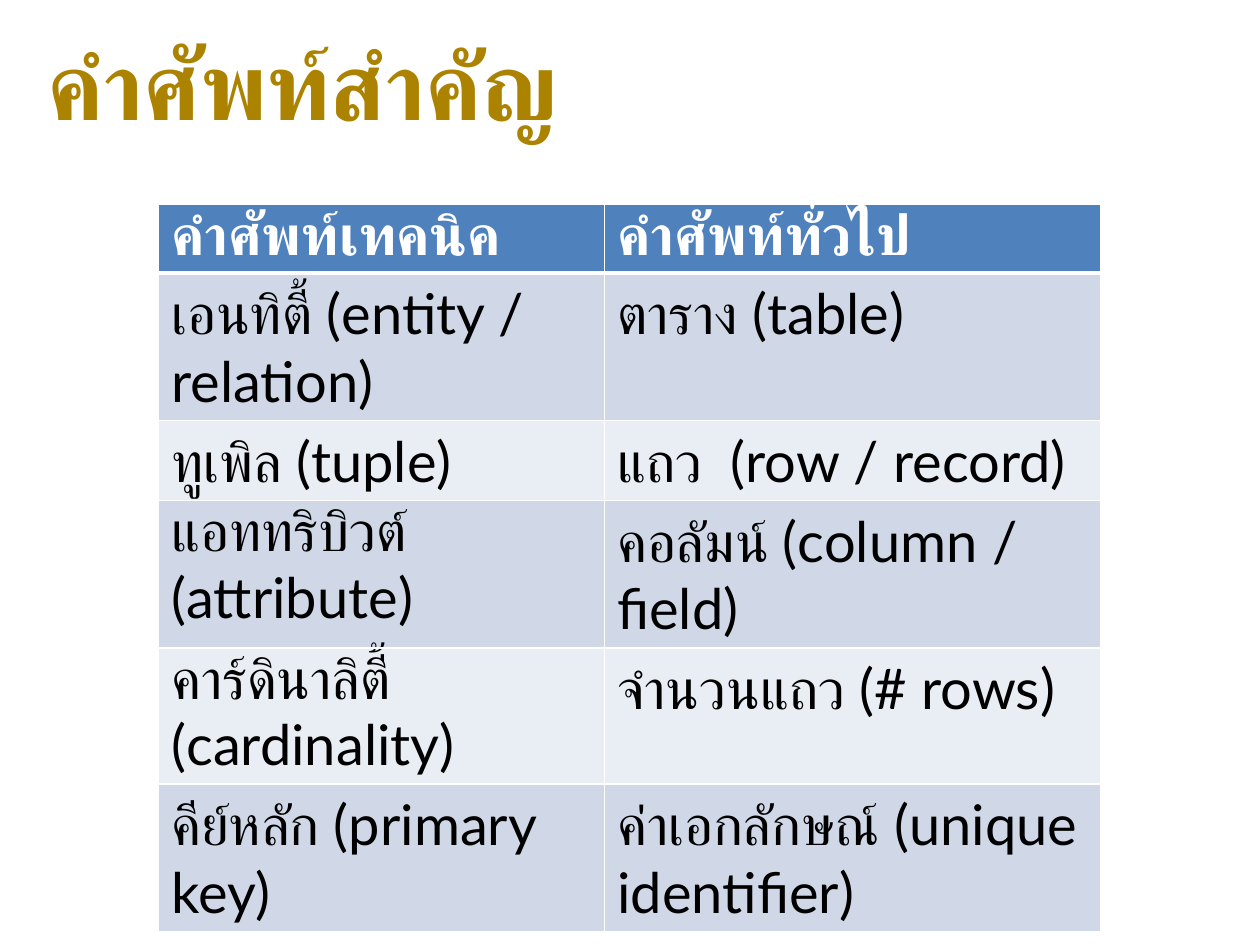
from dataclasses import dataclass

from lxml.etree import SubElement
from pptx import Presentation
from pptx.dml.color import RGBColor as RGB
from pptx.enum.text import MSO_ANCHOR as ANCHOR, MSO_AUTO_SIZE as AUTO, PP_ALIGN as ALIGN
from pptx.oxml.ns import qn
from pptx.util import Pt

PX = 9144


@dataclass(frozen=True)
class Theme:
    font: str = "Lato"
    title_size: int = 54
    body_size: int = 32
    title: str = "AC8300"
    header: str = "4F81BD"
    odd: str = "D0D8E8"
    even: str = "E9EDF4"
    light: str = "FFFFFF"
    dark: str = "000000"


@dataclass(frozen=True)
class Term:
    technical: str
    common: str


THEME = Theme()
HEADER_LINE, GRID_LINE = 3, 1
COL_WIDTHS = (354, 394)
ROW_HEIGHT = 41
TERMS = (
    Term("คำศัพท์เทคนิค", "คำศัพท์ทั่วไป"),
    Term("เอนทิตี้ (entity / relation)", "ตาราง (table)"),
    Term("ทูเพิล (tuple)", "แถว  (row / record)"),
    Term("แอททริบิวต์ (attribute)", "คอลัมน์ (column / field)"),
    Term("คาร์ดินาลิตี้ (cardinality)", "จำนวนแถว (# rows)"),
    Term("คีย์หลัก (primary key)", "ค่าเอกลักษณ์ (unique identifier)"),
)


def px(n: int) -> int:
    return n * PX


def write(tf, text: str, size: int, color: str, bold: bool) -> None:
    tf.text = text
    p = tf.paragraphs[0]
    p.alignment = ALIGN.LEFT
    font = p.runs[0].font
    font.name, font.size, font.bold = THEME.font, Pt(size), bold
    font.color.rgb = RGB.from_string(color)


def set_borders(cell, bottom: int, top: int) -> None:
    tc_pr = cell._tc.get_or_add_tcPr()
    widths = {"a:lnL": GRID_LINE, "a:lnR": GRID_LINE, "a:lnT": top, "a:lnB": bottom}
    for tag, width in widths.items():
        ln = SubElement(tc_pr, qn(tag), w=str(Pt(width)))
        fill = SubElement(ln, qn("a:solidFill"))
        SubElement(fill, qn("a:srgbClr"), val=THEME.light)


def add_title(s, text: str) -> None:
    sp = s.shapes.title
    sp.left, sp.top, sp.width, sp.height = map(px, (28, 3, 795, 126))
    tf = sp.text_frame
    tf.word_wrap, tf.auto_size = True, AUTO.NONE
    tf.vertical_anchor = ANCHOR.MIDDLE
    write(tf, text, THEME.title_size, THEME.title, True)


def add_terms(s, terms: tuple[Term, ...]) -> None:
    frame = s.shapes.add_table(len(terms), len(COL_WIDTHS), px(126), px(162),
                               px(sum(COL_WIDTHS)), px(ROW_HEIGHT * len(terms)))
    table = frame.table
    for col, width in zip(table.columns, COL_WIDTHS):
        col.width = px(width)
    for i, term in enumerate(terms):
        header = i == 0
        fill = THEME.header if header else (THEME.odd if i % 2 else THEME.even)
        table.rows[i].height = px(ROW_HEIGHT)
        for j, text in enumerate((term.technical, term.common)):
            cell = table.cell(i, j)
            write(cell.text_frame, text, THEME.body_size,
                  THEME.light if header else THEME.dark, header)
            set_borders(cell, HEADER_LINE if header else GRID_LINE,
                        HEADER_LINE if i == 1 else GRID_LINE)
            cell.fill.solid()
            cell.fill.fore_color.rgb = RGB.from_string(fill)


def main() -> None:
    prs = Presentation()
    prs.slide_width, prs.slide_height = px(1000), px(750)
    s = prs.slides.add_slide(prs.slide_layouts[5])
    add_title(s, "คำศัพท์สำคัญ")
    add_terms(s, TERMS)
    prs.save("out.pptx")


if __name__ == "__main__":
    main()
